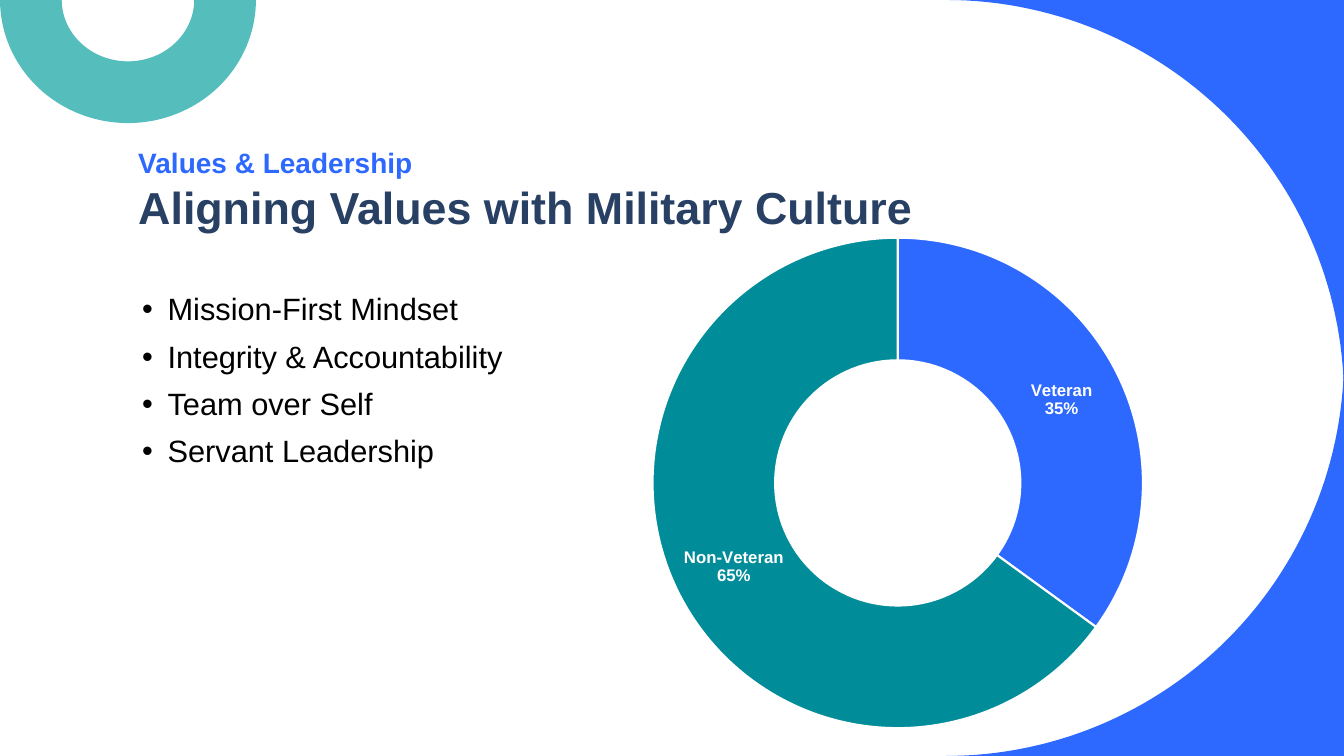
import math
from dataclasses import dataclass

from lxml import etree
from pptx import Presentation
from pptx import util as u
from pptx.chart import data as cd
from pptx.dml.color import RGBColor
from pptx.enum import chart as ch, shapes, text
from pptx.oxml import ns

W, H = 33.87, 19.05  # slide size in cm


@dataclass(frozen=True)
class Theme:
    font: str = "Arial"
    blue: str = "2E69FF"
    teal: str = "008C98"
    aqua: str = "56BDBD"
    navy: str = "284063"
    black: str = "000000"
    white: str = "FFFFFF"
    kicker: int = 20
    title: int = 32
    body: int = 22
    label: int = 12


T = Theme()


def set_attrs(obj, values):
    for name, value in values.items():
        setattr(obj, name, value)


def format_font(font, size, color, bold=False):
    set_attrs(font, {"name": T.font, "size": u.Pt(size), "bold": bold})
    font.color.rgb = RGBColor.from_string(color)


def place(sp, left, top, width, height):
    box = {"left": left, "top": top, "width": width, "height": height}
    set_attrs(sp, {name: u.Cm(v) for name, v in box.items()})


def paint(sp, color):
    sp.shadow.inherit = False
    sp.fill.solid()
    sp.fill.fore_color.rgb = RGBColor.from_string(color)
    sp.line.fill.background()


def add_corner(s, radius, at_bottom, steps=60):
    """Fill the area between a right-hand slide corner and a quarter circle."""
    def flip(y):
        return H - y if at_bottom else y

    angles = [math.pi / 2 * i / steps for i in range(steps + 1)]
    arc = [(u.Cm(W - radius + radius * math.sin(a)),
            u.Cm(flip(radius - radius * math.cos(a)))) for a in angles]
    builder = s.shapes.build_freeform(u.Cm(W), u.Cm(flip(0)))
    builder.add_line_segments(arc, close=True)
    paint(builder.convert_to_shape(), T.blue)


def add_half_ring(s):
    sp = s.shapes.add_shape(shapes.MSO_SHAPE.BLOCK_ARC, u.Cm(0), u.Cm(-3.12),
                            u.Cm(6.45), u.Cm(6.22))
    sp.rotation = 180
    paint(sp, T.aqua)


def fill_title(sp, kicker, title):
    place(sp, 3.23, 3.51, 27.15, 2.49)
    tf = sp.text_frame
    set_attrs(tf, {"word_wrap": True, "auto_size": text.MSO_AUTO_SIZE.NONE,
                   "vertical_anchor": text.MSO_ANCHOR.BOTTOM})
    p = tf.paragraphs[0]
    p.alignment = text.PP_ALIGN.LEFT
    r = p.add_run()
    r.text = kicker
    format_font(r.font, T.kicker, T.blue, bold=True)
    p.add_line_break()
    r = p.add_run()
    r.text = title
    format_font(r.font, T.title, T.navy, bold=True)


def fill_bullets(sp, items):
    place(sp, 3.33, 7.29, 27.15, 9.73)
    tf = sp.text_frame
    set_attrs(tf, {"word_wrap": True, "auto_size": text.MSO_AUTO_SIZE.NONE,
                   "vertical_anchor": text.MSO_ANCHOR.TOP})
    for i, item in enumerate(items):
        p = tf.add_paragraph() if i else tf.paragraphs[0]
        set_attrs(p, {"alignment": text.PP_ALIGN.LEFT, "line_spacing": 0.9,
                      "space_before": u.Pt(10 if i else 0)})
        pPr = p._p.get_or_add_pPr()
        indent = u.Cm(0.64)
        pPr.set("marL", str(indent))
        pPr.set("indent", str(-indent))
        etree.SubElement(pPr, ns.qn("a:buFont")).set("typeface", T.font)
        etree.SubElement(pPr, ns.qn("a:buChar")).set("char", "•")
        r = p.add_run()
        r.text = item
        format_font(r.font, T.body, T.black)


def add_doughnut(s, shares, colors):
    data = cd.CategoryChartData()
    data.categories = list(shares)
    data.add_series("Series 1", list(shares.values()))
    chart = s.shapes.add_chart(ch.XL_CHART_TYPE.DOUGHNUT, u.Cm(12.34), u.Cm(5.64),
                               u.Cm(20.57), u.Cm(13.06), data).chart
    set_attrs(chart, {"has_title": False, "has_legend": False})
    format_font(chart.font, 10, T.black)
    plot = chart.plots[0]
    set_attrs(plot, {"vary_by_categories": True, "has_data_labels": True})

    # Slices
    for i, color in enumerate(colors):
        fmt = plot.series[0].points[i].format
        fmt.fill.solid()
        fmt.fill.fore_color.rgb = RGBColor.from_string(color)
        fmt.line.color.rgb = RGBColor.from_string(T.white)
        fmt.line.width = u.Pt(1.5)

    # Labels
    labels = plot.data_labels
    set_attrs(labels, {"show_category_name": True, "show_percentage": True,
                       "show_value": False, "show_legend_key": False,
                       "number_format": "0%", "number_format_is_linked": False})
    format_font(labels.font, T.label, T.white, bold=True)


def main():
    prs = Presentation()
    set_attrs(prs, {"slide_width": u.Cm(W), "slide_height": u.Cm(H)})
    s = prs.slides.add_slide(prs.slide_layouts[1])

    # Text
    fill_title(s.shapes.title, "Values & Leadership",
               "Aligning Values with Military Culture")
    fill_bullets(s.placeholders[1], ["Mission-First Mindset",
                                     "Integrity & Accountability",
                                     "Team over Self", "Servant Leadership"])

    # Decoration
    for at_bottom in (False, True):
        add_corner(s, 10.03, at_bottom)
    add_half_ring(s)

    # Chart
    add_doughnut(s, {"Veteran": 35, "Non-Veteran": 65}, [T.blue, T.teal])
    prs.save("out.pptx")


if __name__ == "__main__":
    main()
